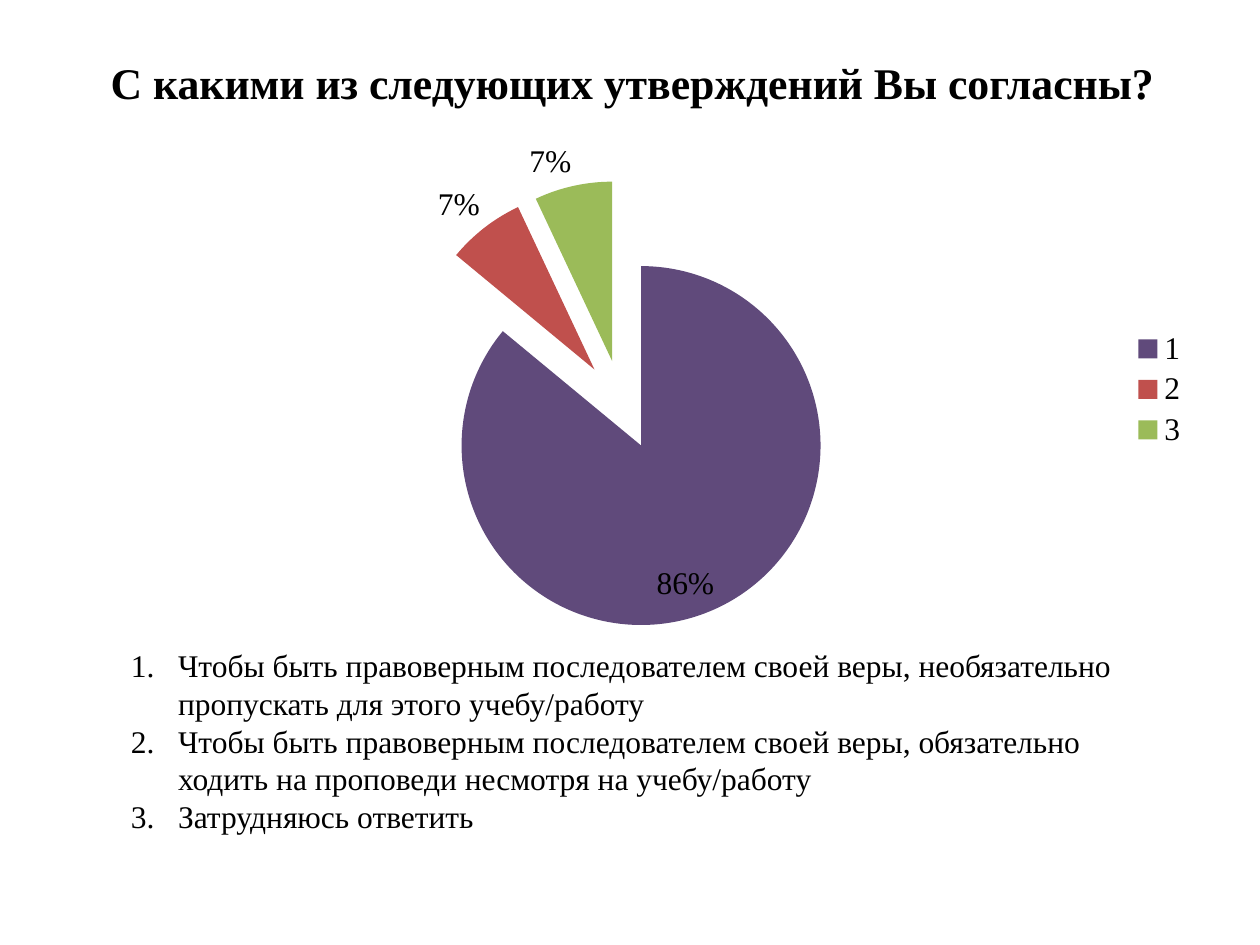
"""Build a survey slide with a pie chart and its numbered answers."""
from dataclasses import dataclass

from lxml.etree import SubElement
from pptx import Presentation
from pptx.chart.data import CategoryChartData as Data
from pptx.dml.color import RGBColor as Color
from pptx.enum.chart import XL_CHART_TYPE as Kind
from pptx.enum.chart import XL_LABEL_POSITION as Spot
from pptx.enum.chart import XL_LEGEND_POSITION as Side
from pptx.oxml import parse_xml
from pptx.oxml.ns import nsdecls, qn
from pptx.util import Cm, Pt


@dataclass(frozen=True)
class Theme:
    """Colours and type sizes."""
    face: str = "Times New Roman"
    ink: str = "000000"
    head: float = 25
    body: float = 18


@dataclass(frozen=True)
class Box:
    """A place on the slide in centimetres."""
    left: float
    top: float
    width: float
    height: float

    def frame(self) -> tuple:
        """Give the place as lengths."""
        return Cm(self.left), Cm(self.top), Cm(self.width), Cm(self.height)


@dataclass(frozen=True)
class Slice:
    """One answer and its share of the pie."""
    text: str
    share: int
    fill: str
    spot: Spot


THEME = Theme()
TITLE = "С какими из следующих утверждений Вы согласны?"
SLICES = (
    Slice("Чтобы быть правоверным последователем своей веры, необязательно "
          "пропускать для этого учебу/работу", 86, "604A7B", Spot.INSIDE_END),
    Slice("Чтобы быть правоверным последователем своей веры, обязательно "
          "ходить на проповеди несмотря на учебу/работу", 7, "C0504D", Spot.OUTSIDE_END),
    Slice("Затрудняюсь ответить", 7, "9BBB59", Spot.OUTSIDE_END),
)
BURST = 25
PLOT = {"x": 0.27, "y": 0.1, "w": 0.41, "h": 0.86}
INDENT = Cm(0.95)


def style(font, size: float, bold: bool = False) -> None:
    """Apply the theme to a font."""
    font.name, font.size, font.bold = THEME.face, Pt(size), bold
    font.color.rgb = Color.from_string(THEME.ink)


def write(slide, box: Box, lines: list[str], size: float, bold: bool = False) -> list:
    """Add a wrapped text box and return its paragraphs."""
    frame = slide.shapes.add_textbox(*box.frame()).text_frame
    frame.word_wrap = True
    frame.text = "\n".join(lines)
    for para in frame.paragraphs:
        style(para.font, size, bold)
    return list(frame.paragraphs)


def number(para) -> None:
    """Give a paragraph a hanging number."""
    props = para._p.get_or_add_pPr()
    props.set("marL", str(INDENT))
    props.set("indent", str(-INDENT))
    mark = parse_xml(f'<a:buAutoNum {nsdecls("a")} type="arabicPeriod"/>')
    props.insert(0, mark)


def place(chart) -> None:
    """Fix the plot within the chart."""
    area = chart.element.find(".//" + qn("c:plotArea"))
    for old in area.findall(qn("c:layout")):
        area.remove(old)
    layout = parse_xml(f'<c:layout {nsdecls("c")}/>')
    manual = SubElement(layout, qn("c:manualLayout"))
    SubElement(manual, qn("c:layoutTarget"), val="inner")
    for axis in "xy":
        SubElement(manual, qn(f"c:{axis}Mode"), val="edge")
    for key, part in PLOT.items():
        SubElement(manual, qn(f"c:{key}"), val=str(part))
    area.insert(0, layout)


def label(chart, series) -> None:
    """Show each share as a percentage."""
    tags = series.data_labels
    tags.show_percentage, tags.show_value = True, False
    tags.number_format, tags.number_format_is_linked = "0%", False
    for point, item in zip(series.points, SLICES):
        point.data_label.position = item.spot
    for tag in chart.element.iter(qn("c:dLbl")):
        tag.find(qn("c:showVal")).set("val", "0")
        tag.find(qn("c:showPercent")).set("val", "1")


def draw(slide, box: Box) -> None:
    """Add the exploded pie chart."""
    data = Data()
    data.categories = [str(i) for i, _ in enumerate(SLICES, 1)]
    data.add_series("Series 1", [item.share for item in SLICES])
    chart = slide.shapes.add_chart(Kind.PIE, *box.frame(), data).chart
    chart.has_title = False
    style(chart.font, THEME.body)
    chart.has_legend = True
    chart.legend.position = Side.RIGHT
    chart.legend.include_in_layout = False
    chart.plots[0].vary_by_categories = True
    series = chart.plots[0].series[0]
    for point, item in zip(series.points, SLICES):
        point.format.fill.solid()
        point.format.fill.fore_color.rgb = Color.from_string(item.fill)
    burst = parse_xml(f'<c:explosion {nsdecls("c")} val="{BURST}"/>')
    chart.element.find(".//" + qn("c:dPt")).addprevious(burst)
    label(chart, series)
    place(chart)


def main() -> None:
    """Build and save the slide."""
    deck = Presentation()
    deck.slide_width, deck.slide_height = Cm(25.4), Cm(19.05)
    slide = deck.slides.add_slide(deck.slide_layouts[6])
    write(slide, Box(1.98, 0.99, 22.81, 1.32), [TITLE], THEME.head, True)
    draw(slide, Box(1.98, 2.59, 22.23, 10.52))
    answers = [item.text for item in SLICES]
    for para in write(slide, Box(2.39, 12.9, 20.83, 4.11), answers, THEME.body):
        number(para)
    deck.save("out.pptx")


if __name__ == "__main__":
    main()
